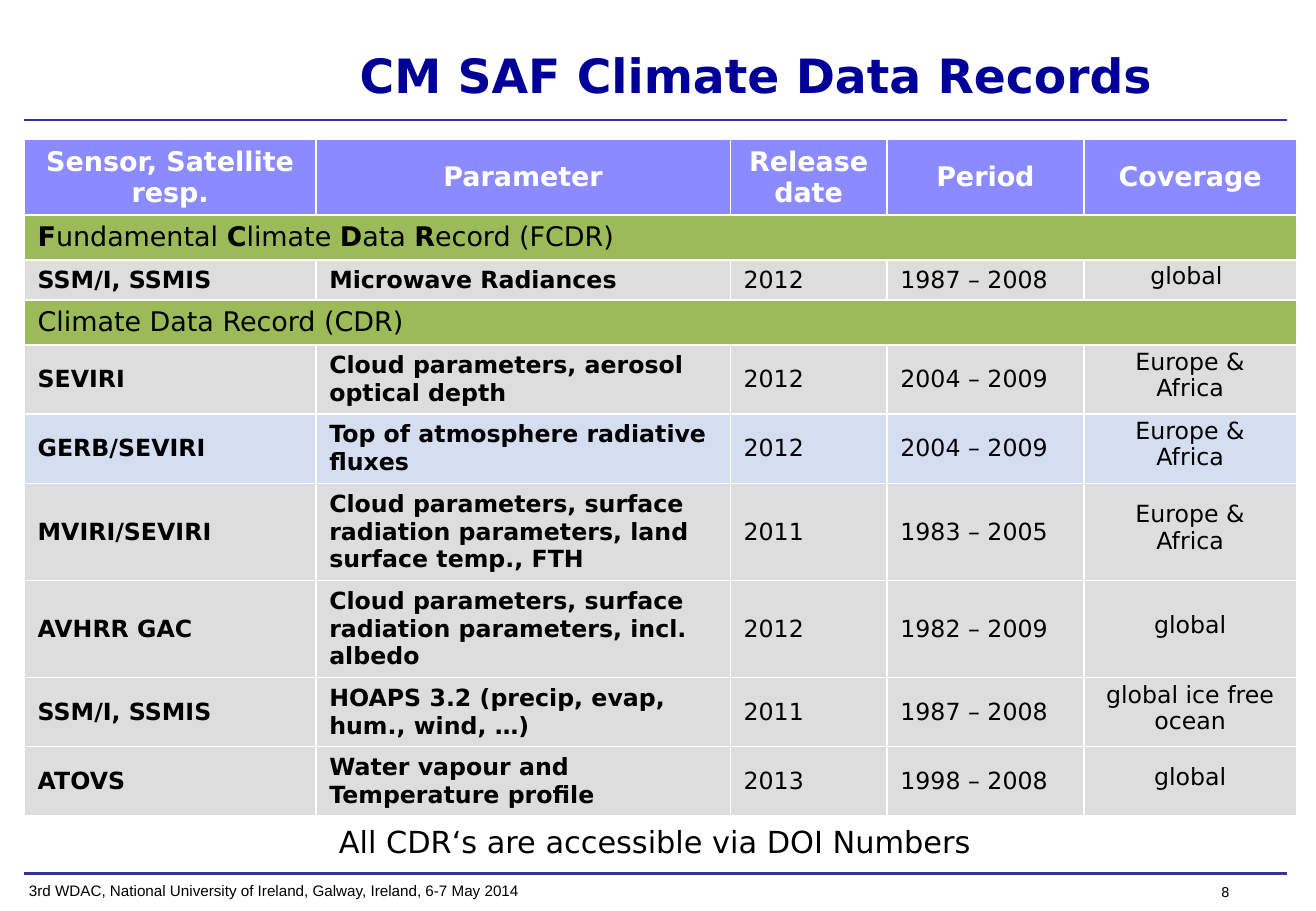
from lxml import etree
from pptx import Presentation
from pptx import util as u
from pptx.dml.color import RGBColor
from pptx.enum import shapes, text
from pptx.oxml import ns

HUES = {"title": "000099", "rule": "333399", "head": "8B8BFF", "band": "9BBB59",
        "row": "DDDDDD", "tint": "D4DEF0", "ink": "000000", "white": "FFFFFF"}
FACE = "DejaVu Sans"
COLS = [2.4, 3.41, 1.29, 1.62, 1.75]
HIGH = [0.62, 0.37, 0.33, 0.37, 0.57, 0.57, 0.8, 0.8, 0.57, 0.57]
ROWS = [
    ["Sensor, Satellite resp.", "Parameter", "Release date", "Period", "Coverage"],
    ["*F*undamental *C*limate *D*ata *R*ecord (FCDR)"],
    ["SSM/I, SSMIS", "Microwave Radiances", "2012", "1987 – 2008", "global "],
    ["Climate Data Record (CDR)"],
    ["SEVIRI", "Cloud parameters, aerosol optical depth", "2012", "2004 – 2009",
     "Europe &\nAfrica"],
    ["GERB/SEVIRI", "Top of atmosphere radiative fluxes", "2012", "2004 – 2009",
     "Europe &\nAfrica"],
    ["MVIRI/SEVIRI",
     "Cloud parameters, surface radiation parameters, land surface temp., FTH",
     "2011", "1983 – 2005", "Europe &\nAfrica"],
    ["AVHRR GAC", "Cloud parameters, surface radiation parameters, incl. albedo",
     "2012", "1982 – 2009", "global"],
    ["SSM/I, SSMIS", "HOAPS 3.2 (precip, evap, hum., wind, …)", "2011",
     "1987 – 2008", "global ice free\nocean"],
    ["ATOVS", "Water vapour and Temperature profile", "2013", "1998 – 2008", "global"],
]


def hue(name):
    return RGBColor.from_string(HUES[name])


def style(font, size, color="ink", bold=False, face=FACE):
    font.name, font.size, font.bold = face, u.Pt(size), bold
    font.color.rgb = hue(color)


def place(shape, box):
    shape.left, shape.top, shape.width, shape.height = [u.Inches(n) for n in box]


def title(slide, box, words):
    shape = slide.shapes.title
    place(shape, box)
    frame = shape.text_frame
    frame.text = words
    frame.vertical_anchor = text.MSO_ANCHOR.TOP
    frame.paragraphs[0].alignment = text.PP_ALIGN.LEFT
    style(frame.paragraphs[0].runs[0].font, 28, "title", True)


def label(slide, box, words, size, face=FACE, align=text.PP_ALIGN.LEFT):
    frame = slide.shapes.add_textbox(*[u.Inches(n) for n in box]).text_frame
    frame.word_wrap = False
    frame.text = words
    frame.paragraphs[0].alignment = align
    style(frame.paragraphs[0].runs[0].font, size, face=face)


def rule(slide, left, top, width):
    line = slide.shapes.add_connector(
        shapes.MSO_CONNECTOR.STRAIGHT, u.Inches(left), u.Inches(top),
        u.Inches(left + width), u.Inches(top))
    line.line.color.rgb = hue("rule")
    line.line.width = u.Pt(1.5)
    etree.SubElement(line._element.spPr, ns.qn("a:effectLst"))


def edge(cell):
    props = cell._tc.get_or_add_tcPr()
    for side in ("lnL", "lnR", "lnT", "lnB"):
        line = etree.SubElement(props, ns.qn("a:" + side), w=str(u.Pt(1)))
        fill = etree.SubElement(line, ns.qn("a:solidFill"))
        etree.SubElement(fill, ns.qn("a:srgbClr"), val=HUES["white"])


def paint(cell, color):
    edge(cell)
    cell.fill.solid()
    cell.fill.fore_color.rgb = hue(color)
    cell.vertical_anchor = text.MSO_ANCHOR.MIDDLE
    cell.margin_left = cell.margin_right = u.Inches(0.11)


def band(cell, words):
    para = cell.text_frame.paragraphs[0]
    for i, part in enumerate(words.split("*")):
        if part:
            run = para.add_run()
            run.text = part
            style(run.font, 16, bold=i % 2 == 1)


def fill(cell, words, head, col):
    cell.text_frame.text = words
    for para in cell.text_frame.paragraphs:
        if head or col == 4:
            para.alignment = text.PP_ALIGN.CENTER
        if col == 4 and not head:
            para.line_spacing = 0.5
            para.space_after = u.Pt(7.25)
        size, color = (16, "white") if head else (14, "ink")
        style(para.runs[0].font, size, color, head or col < 2)


def records(slide, left, top):
    table = slide.shapes.add_table(
        len(ROWS), len(COLS), u.Inches(left), u.Inches(top),
        u.Inches(sum(COLS)), u.Inches(sum(HIGH))).table
    for col, width in zip(table.columns, COLS):
        col.width = u.Inches(width)
    for r, (row, high) in enumerate(zip(ROWS, HIGH)):
        table.rows[r].height = u.Inches(high)
        wide = len(row) == 1
        color = "head" if r == 0 else "band" if wide else "tint" if r == 5 else "row"
        for c in range(len(COLS)):
            paint(table.cell(r, c), color)
        if wide:
            table.cell(r, 0).merge(table.cell(r, len(COLS) - 1))
            band(table.cell(r, 0), row[0])
        else:
            for c, words in enumerate(row):
                fill(table.cell(r, c), words, r == 0, c)


def footer(slide, left, top, width):
    rule(slide, left, top, width)
    label(slide, (left - 0.06, top + 0.02, 4.24, 0.25),
          "3rd WDAC, National University of Ireland, Galway, Ireland, 6-7 May 2014",
          9, "Arial")
    label(slide, (left + 9.6, top + 0.04, 0.57, 0.15), "8", 8,
          align=text.PP_ALIGN.CENTER)


def main():
    deck = Presentation()
    deck.slide_width, deck.slide_height = u.Inches(10.83), u.Inches(7.5)
    slide = deck.slides.add_slide(deck.slide_layouts[5])
    title(slide, (2.86, 0.33, 7.73, 0.57), "CM SAF Climate Data Records")
    rule(slide, 0.2, 0.99, 10.39)
    records(slide, 0.2, 1.15)
    label(slide, (2.69, 6.73, 5.49, 0.4), "All CDR‘s are accessible via DOI Numbers", 18)
    footer(slide, 0.2, 7.19, 10.39)
    deck.save("out.pptx")


if __name__ == "__main__":
    main()
